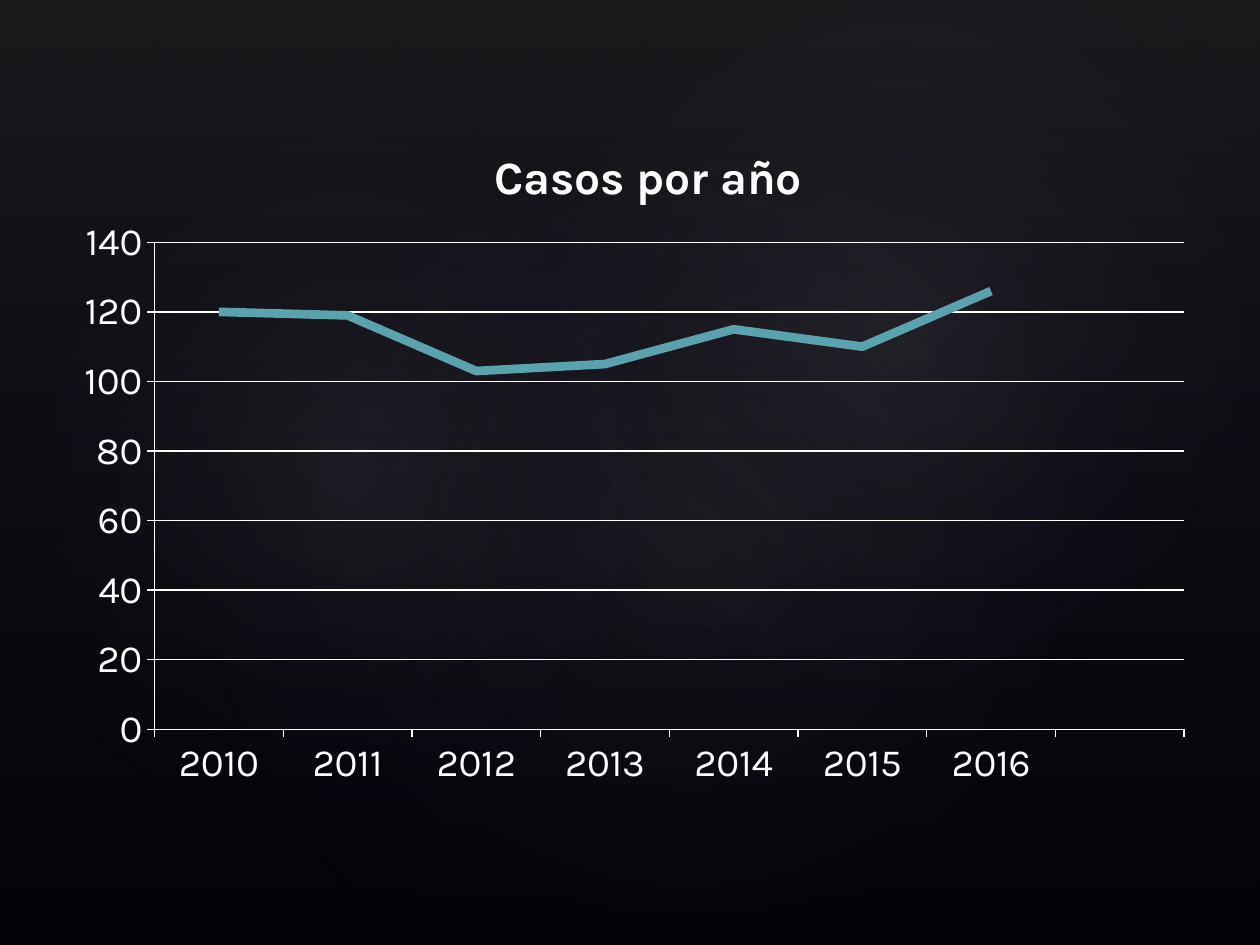
import pptx
import pptx.chart.data
import pptx.dml.color
import pptx.enum.chart
import pptx.enum.shapes
import pptx.oxml
import pptx.oxml.ns
import pptx.util
from dataclasses import dataclass

Inches = pptx.util.Inches
Pt = pptx.util.Pt
rgb = pptx.dml.color.RGBColor.from_string


@dataclass(frozen=True)
class Theme:
    font: str = "Karla"
    background: str = "000000"
    text: str = "FFFFFF"
    series: str = "5AA2AE"
    veil: str = "504652"
    navy: str = "242852"
    glow: str = "C4BCC6"
    label_size: float = 22
    title_size: float = 26.4


theme = Theme()


def add_gradient(preset, place, stops, direction):
    """Add a shape with (position %, colour, opacity %) stops and a:lin or a:path XML."""
    shape = page.shapes.add_shape(preset, *(Inches(length) for length in place))
    shape.shadow.inherit = False
    shape.line.fill.background()
    stop_xml = "".join(
        f'<a:gs pos="{position * 1000}"><a:srgbClr val="{color}">'
        f'<a:alpha val="{opacity * 1000}"/></a:srgbClr></a:gs>'
        for position, color, opacity in stops)
    fill = pptx.oxml.parse_xml(
        f'<a:gradFill {pptx.oxml.ns.nsdecls("a")} rotWithShape="1">'
        f'<a:gsLst>{stop_xml}</a:gsLst>{direction}</a:gradFill>')
    shape.element.spPr.find(pptx.oxml.ns.qn("a:prstGeom")).addnext(fill)
    return shape


def layout_xml(target, **fractions):
    """Manual layout, in fractions of the chart area."""
    sizes = "".join(f'<c:{name} val="{value}"/>' for name, value in fractions.items())
    return pptx.oxml.parse_xml(
        f'<c:layout {pptx.oxml.ns.nsdecls("c")}><c:manualLayout>{target}'
        f'<c:xMode val="edge"/><c:yMode val="edge"/>{sizes}</c:manualLayout></c:layout>')


deck = pptx.Presentation()
deck.slide_width, deck.slide_height = Inches(10), Inches(7.5)
page = deck.slides.add_slide(deck.slide_layouts[6])
page.background.fill.solid()
page.background.fill.fore_color.rgb = rgb(theme.background)

# Dark backdrop with three soft glows
presets = pptx.enum.shapes.MSO_SHAPE
add_gradient(presets.RECTANGLE, (0, 0, 10, 7.5),
             [(0, theme.veil, 36), (100, theme.navy, 10)],
             '<a:lin ang="5400000" scaled="0"/>')
radial = ('<a:path path="circle"><a:fillToRect l="50000" t="50000" '
          'r="50000" b="50000"/></a:path>')
glows = [
    ((1.5, 1.14, 7.92, 6.24), 328.7, 7),
    ((-0.3, 1.28, 6.06, 4.9), 294.3, 8),
    ((3.58, 0.13, 7.09, 5.2), 328.7, 8),
]
for place, rotation, opacity in glows:
    glow = add_gradient(presets.OVAL, place,
                        [(0, theme.glow, opacity), (58, theme.navy, 0), (100, theme.navy, 0)],
                        radial)
    glow.rotation = rotation

# Cases per year
data = pptx.chart.data.CategoryChartData()
data.categories = ["2010", "2011", "2012", "2013", "2014", "2015", "2016", ""]
data.add_series("Casos por año", [120, 119, 103, 105, 115, 110, 126, None])
chart = page.shapes.add_chart(
    pptx.enum.chart.XL_CHART_TYPE.LINE,
    Inches(0.5), Inches(0.82), Inches(9.08), Inches(5.52), data).chart
chart.has_legend = False
chart.font.name = theme.font
chart.font.size = Pt(theme.label_size)
chart.font.color.rgb = rgb(theme.text)
chart.plots[0].vary_by_categories = False

series = chart.plots[0].series[0]
series.smooth = False
series.marker.style = pptx.enum.chart.XL_MARKER_STYLE.NONE
series.format.line.color.rgb = rgb(theme.series)
series.format.line.width = Pt(5)

chart.has_title = True
chart.chart_title.include_in_layout = False
chart.chart_title.text_frame.text = "Casos por año"
title_font = chart.chart_title.text_frame.paragraphs[0].runs[0].font
title_font.name = theme.font
title_font.size = Pt(theme.title_size)
title_font.bold = True
title_font.color.rgb = rgb(theme.text)

values = chart.value_axis
values.minimum_scale, values.maximum_scale, values.major_unit = 0, 140, 20
values.has_major_gridlines = True
chart.category_axis.has_major_gridlines = False
for axis in (chart.category_axis, values):
    axis.major_tick_mark = pptx.enum.chart.XL_TICK_MARK.OUTSIDE
    axis.minor_tick_mark = pptx.enum.chart.XL_TICK_MARK.NONE
for lined in (chart.category_axis, values, values.major_gridlines):
    lined.format.line.color.rgb = rgb(theme.text)
    lined.format.line.width = Pt(0.75)

plot_area = chart.element.xpath(".//c:plotArea")[0]
title = chart.element.xpath(".//c:title")[0]
for parent in (plot_area, title):
    for old in parent.findall(pptx.oxml.ns.qn("c:layout")):
        parent.remove(old)
plot_area.insert(0, layout_xml('<c:layoutTarget val="inner"/>', x=0.08, y=0.2, w=0.9, h=0.7))
title.find(pptx.oxml.ns.qn("c:tx")).addnext(layout_xml("", x=0.37, y=0.05))

deck.save("out.pptx")
